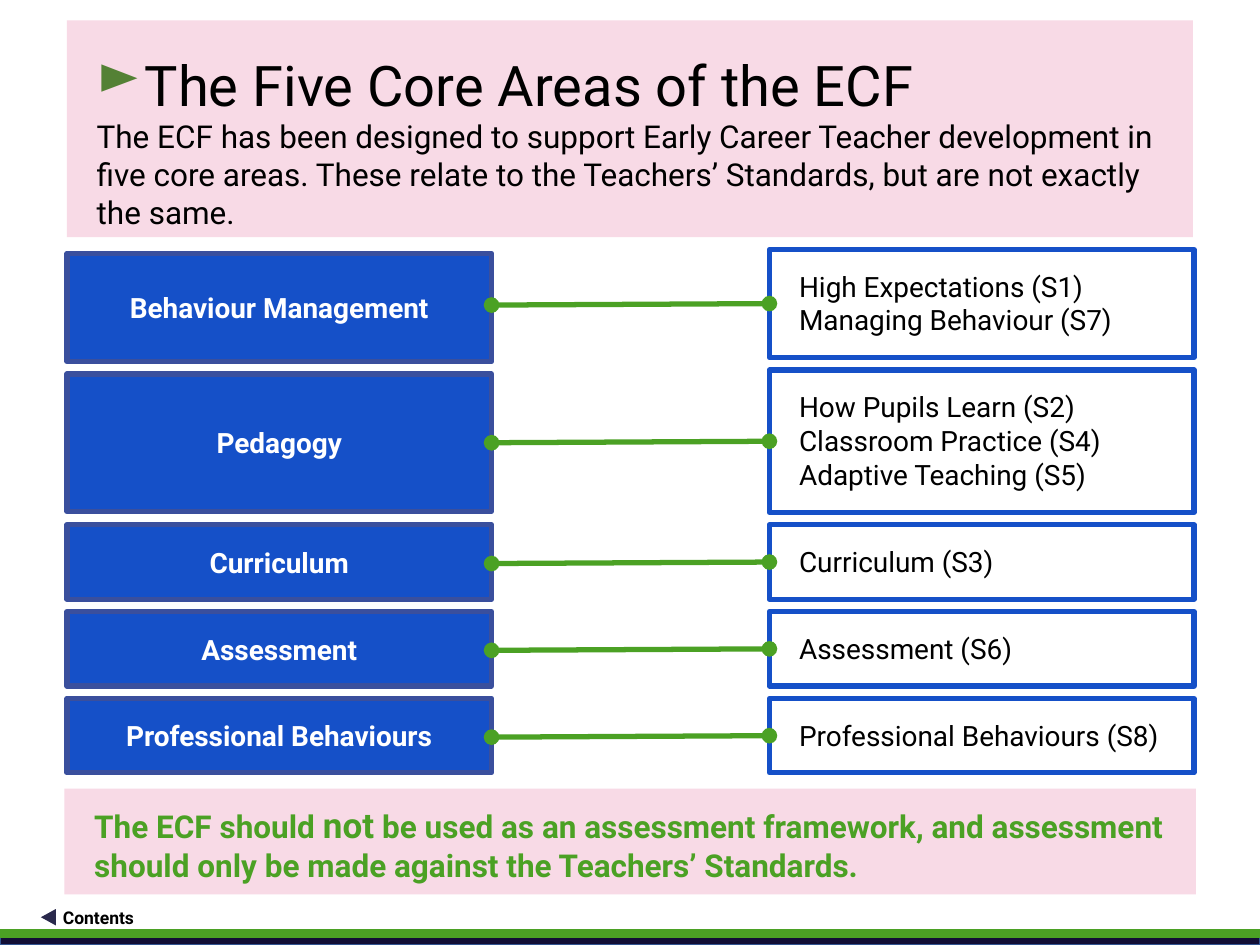
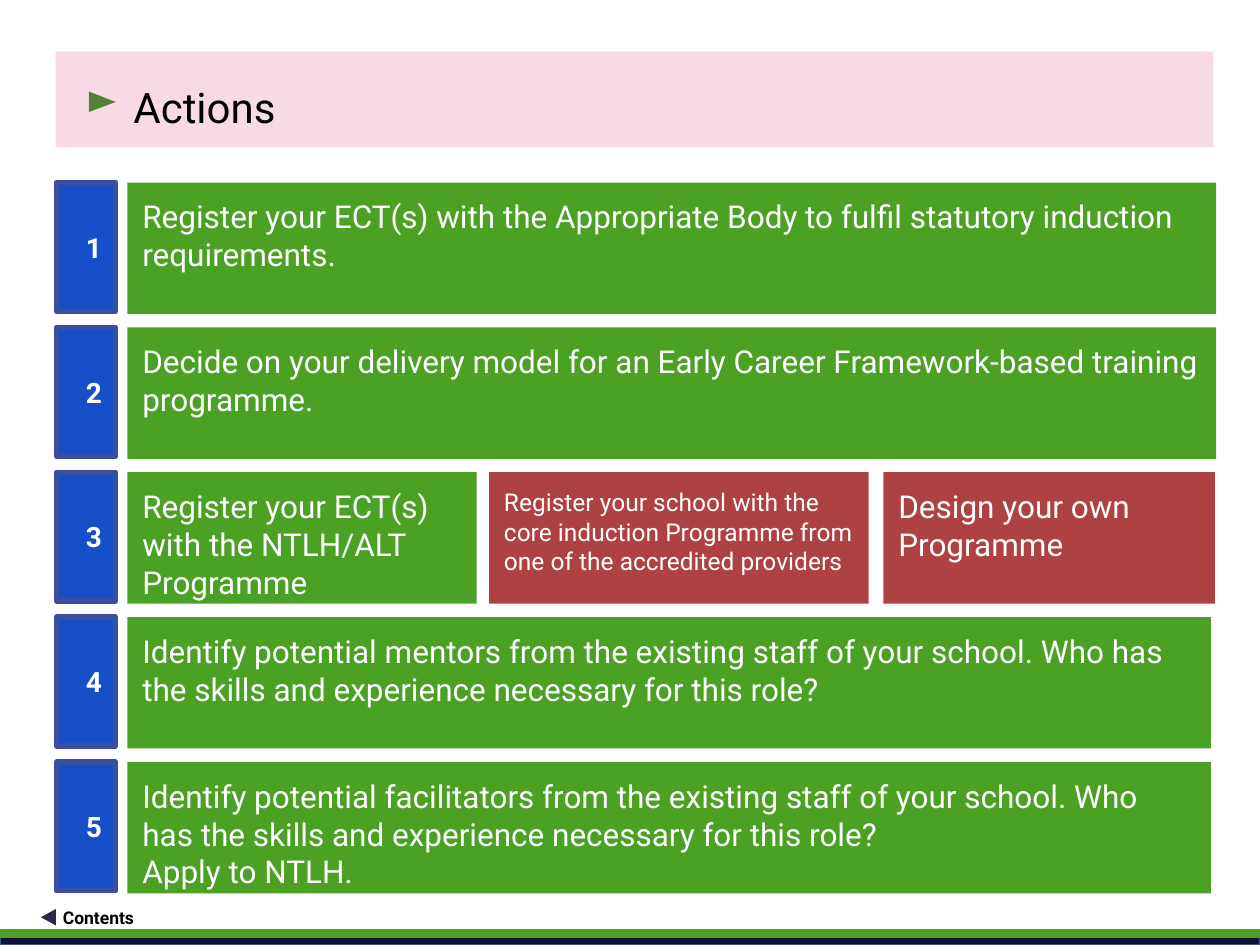
from lxml.etree import SubElement
from pptx import Presentation
from pptx.dml.color import RGBColor
from pptx.enum.shapes import MSO_CONNECTOR, MSO_SHAPE
from pptx.enum.text import MSO_ANCHOR, PP_ALIGN
from pptx.oxml.ns import qn
from pptx.util import Cm, Pt

PINK = RGBColor(0xF8, 0xDA, 0xE6)
BLUE = RGBColor(0x15, 0x50, 0xC8)
EDGE = RGBColor(0x3A, 0x4F, 0x9D)
GREEN = RGBColor(0x4B, 0xA1, 0x24)
MOSS = RGBColor(0x54, 0x81, 0x35)
RED = RGBColor(0xAE, 0x41, 0x41)
NAVY = RGBColor(0x12, 0x0E, 0x35)
STEEL = RGBColor(0x32, 0x54, 0x91)
INK = RGBColor(0x2A, 0x29, 0x4C)
BLACK = RGBColor(0, 0, 0)
WHITE = RGBColor(0xFF, 0xFF, 0xFF)
FONT = "Roboto"
GAP = 0.25
STEP = 2.92

AREAS = [
    ("Behaviour Management", ["High Expectations (S1)", "Managing Behaviour (S7)"], 2.18, 2.18, 0.08),
    ("Pedagogy", ["How Pupils Learn (S2)", "Classroom Practice (S4)", "Adaptive Teaching (S5)"], 2.87, 2.77, 0.08),
    ("Curriculum", ["Curriculum (S3)"], 1.5, 1.5, 0),
    ("Assessment", ["Assessment (S6)"], 1.5, 1.5, 0),
    ("Professional Behaviours", ["Professional Behaviours (S8)"], 1.5, 1.5, 0),
]

ACTIONS = [
    [(0, 21.95, ["Register your ECT(s) with the Appropriate Body to fulfil statutory induction requirements."], 18, GREEN)],
    [(0, 21.95, ["Decide on your delivery model for an Early Career Framework-based training programme."], 18, GREEN)],
    [
        (0, 7.04, ["Register your ECT(s) with the NTLH/ALT Programme"], 18, GREEN),
        (7.29, 7.65, ["Register your school with the core induction Programme from one of the accredited providers"], 14, RED),
        (15.24, 6.68, ["Design your own Programme"], 18, RED),
    ],
    [(0, 21.84, ["Identify potential mentors from the existing staff of your school. "
                 "Who has the skills and experience necessary for this role?"], 18, GREEN)],
    [(0, 21.84, ["Identify potential facilitators from the existing staff of your school. "
                 "Who has the skills and experience necessary for this role?", "Apply to NTLH."], 18, GREEN)],
]


def style(run, size, color, bold=False):
    """Set the font of a run."""
    run.font.name = FONT
    run.font.size = Pt(size)
    run.font.bold = bold
    run.font.color.rgb = color


def write(shape, lines, size, color, pads, bold=False, align=PP_ALIGN.LEFT, anchor=MSO_ANCHOR.TOP):
    """Fill a shape with one paragraph for each line."""
    frame = shape.text_frame
    frame.word_wrap = True
    frame.vertical_anchor = anchor
    frame.margin_left, frame.margin_top, frame.margin_right, frame.margin_bottom = map(Cm, pads)
    frame.text = "\n".join(lines)
    for para in frame.paragraphs:
        para.alignment = align
        for run in para.runs:
            style(run, size, color, bold)


def block(slide, box, fill, line=None, width=3, kind=MSO_SHAPE.RECTANGLE):
    """Add a flat filled shape in the box."""
    shape = slide.shapes.add_shape(kind, *map(Cm, box))
    shape.shadow.inherit = False
    shape.fill.solid()
    shape.fill.fore_color.rgb = fill
    if line is None:
        shape.line.fill.background()
    else:
        shape.line.color.rgb = line
        shape.line.width = Pt(width)
    return shape


def label(slide, box, text):
    """Add a blue box with a bold centred label."""
    shape = block(slide, box, BLUE, EDGE)
    write(shape, [text], 16, WHITE, (0.6, 0.4, 0.6, 0.4), True, PP_ALIGN.CENTER, MSO_ANCHOR.MIDDLE)


def header(slide, box, title, size, lead=()):
    """Add the pink band with its arrow title and lead text."""
    shape = block(slide, box, PINK)
    write(shape, [title, *lead], 18, BLACK, (0.6, 0.6, 0.6, 0.3))
    para = shape.text_frame.paragraphs[0]
    para.alignment = PP_ALIGN.JUSTIFY
    para.runs[0].font.size = Pt(size)
    props = para._p.get_or_add_pPr()
    props.set("marL", str(Cm(0.97)))
    props.set("indent", str(-Cm(0.97)))
    tint = SubElement(props, qn("a:buClr"))
    SubElement(tint, qn("a:srgbClr"), val=str(MOSS))
    SubElement(props, qn("a:buChar"), char="►")


def footer(slide):
    """Add the contents mark and the two bottom bands."""
    mark = block(slide, (0.81, 18.34, 0.33, 0.3), INK, kind=MSO_SHAPE.ISOSCELES_TRIANGLE)
    mark.rotation = 270
    text = slide.shapes.add_textbox(*map(Cm, (1.27, 18.29, 2.13, 0.43)))
    write(text, ["Contents"], 10, BLACK, (0, 0, 0, 0), True)
    block(slide, (0, 18.75, 25.4, 0.3), NAVY, STEEL, 1)
    block(slide, (0, 18.75, 25.4, 0.15), GREEN, GREEN, 1)


def link(slide, left, right, level):
    """Join two boxes with a green line that ends in dots."""
    line = slide.shapes.add_connector(
        MSO_CONNECTOR.STRAIGHT, Cm(left), Cm(level + 0.03), Cm(right), Cm(level))
    line.line.color.rgb = GREEN
    line.line.width = Pt(3)
    stroke = line.line._get_or_add_ln()
    for end in ("a:headEnd", "a:tailEnd"):
        SubElement(stroke, qn(end), type="oval")
    SubElement(line._element.spPr, qn("a:effectLst"))


def pairs(slide, box):
    """Stack the core areas beside their standards."""
    left, top, width, wide = box
    right = left + width - wide
    for name, items, high, low, drop in AREAS:
        label(slide, (left, top + drop, wide, low), name)
        shape = block(slide, (right, top, wide, high), WHITE, BLUE)
        write(shape, items, 16, BLACK, (0.6, 0.4, 0.6, 0.4))
        link(slide, left + wide, right, top + high / 2)
        top += high + GAP


def notice(slide, box):
    """Add the pink band with the green warning."""
    shape = block(slide, box, PINK)
    write(shape, ["The ECF should "], 18, GREEN, (0.6, 0.3, 0.6, 0.3), True)
    para = shape.text_frame.paragraphs[0]
    rest = " be used as an assessment framework, and assessment should only be made against the Teachers’ Standards."
    for text, size in (("not", 20), (rest, 18)):
        run = para.add_run()
        run.text = text
        style(run, size, GREEN, True)


def steps(slide, box):
    """Number the actions and lay out the cells of each."""
    left, top, wide, high = box
    for place, cells in enumerate(ACTIONS):
        level = top + place * STEP
        label(slide, (left, level, wide, high), str(place + 1))
        for shift, width, lines, size, fill in cells:
            shape = block(slide, (left + 1.43 + shift, level, width, high + 0.05), fill)
            write(shape, lines, size, WHITE, (0.3, 0.3, 0.3, 0.3))


def main():
    """Build both slides and save them."""
    deck = Presentation()
    deck.slide_width, deck.slide_height = Cm(25.4), Cm(19.05)
    blank = deck.slide_layouts[6]

    core = deck.slides.add_slide(blank)
    header(core, (1.35, 0.41, 22.7, 4.37), "The Five Core Areas of the ECF", 32, [
        "The ECF has been designed to support Early Career Teacher development in five core areas. "
        "These relate to the Teachers’ Standards, but are not exactly the same."])
    pairs(core, (1.35, 5.03, 22.72, 8.56))
    notice(core, (1.3, 15.9, 22.81, 2.13))
    footer(core)

    plan = deck.slides.add_slide(blank)
    header(plan, (1.12, 1.04, 23.34, 1.93), "Actions", 24)
    steps(plan, (1.14, 3.68, 1.19, 2.6))
    footer(plan)
    deck.save("out.pptx")


if __name__ == "__main__":
    main()
